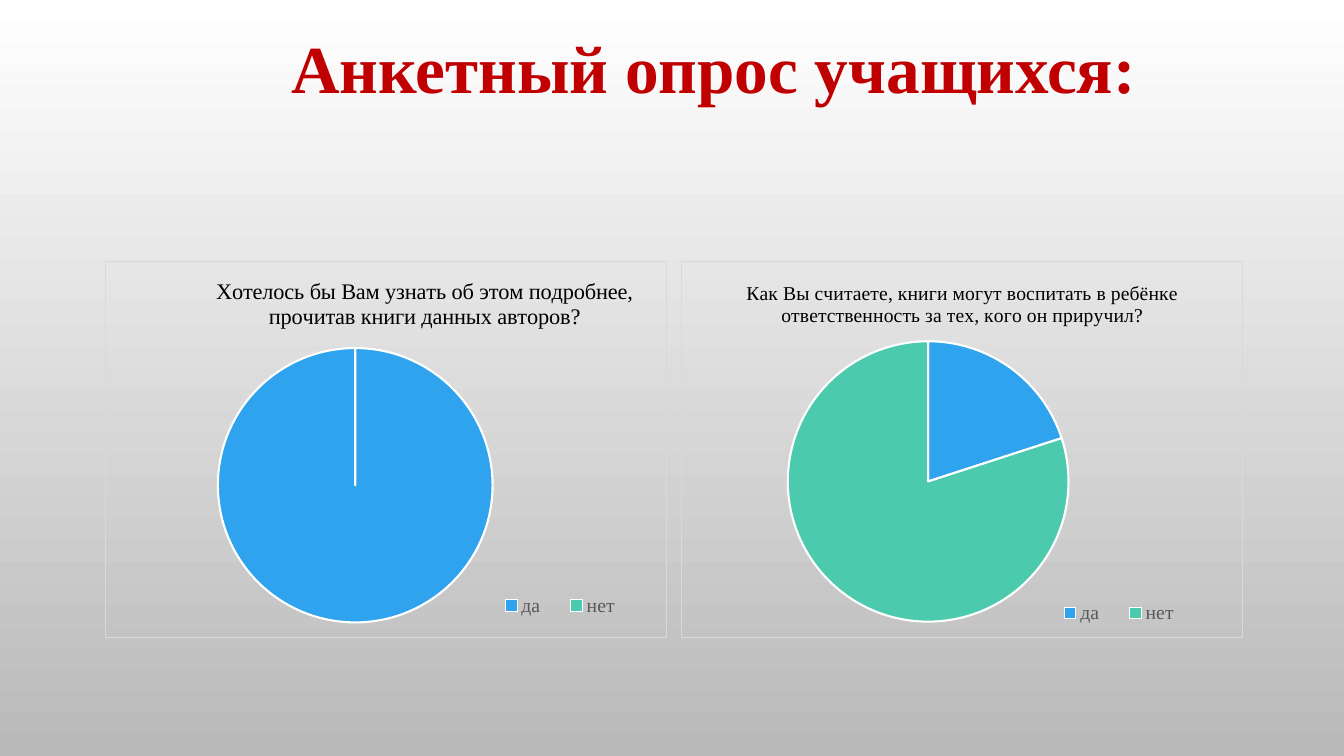
"""Build a survey slide with two pie charts of pupils' answers."""
from lxml import etree
from pptx import Presentation
from pptx.chart.data import CategoryChartData
from pptx.dml.color import RGBColor
from pptx.enum.chart import XL_CHART_TYPE, XL_LEGEND_POSITION
from pptx.enum.text import MSO_ANCHOR, PP_ALIGN
from pptx.oxml import parse_xml
from pptx.oxml.ns import nsdecls, qn
from pptx.util import Inches, Pt

PIE = XL_CHART_TYPE.PIE
LEGEND_RIGHT = XL_LEGEND_POSITION.RIGHT
LEFT = PP_ALIGN.LEFT
TOP = MSO_ANCHOR.TOP

RED = RGBColor(0xC0, 0x00, 0x00)
BLACK = RGBColor(0x00, 0x00, 0x00)
WHITE = RGBColor(0xFF, 0xFF, 0xFF)
GRAY = RGBColor(0xB9, 0xB9, 0xB9)
LEGEND_GRAY = RGBColor(0x59, 0x59, 0x59)
BLUE = RGBColor(0x2F, 0xA3, 0xEE)
GREEN = RGBColor(0x4B, 0xCA, 0xAD)
SERIF = "Times New Roman"

HEADING = "Анкетный опрос учащихся:"
ANSWERS = ["да", "нет"]
SURVEYS = [
    {
        "question": "Хотелось бы Вам узнать об этом подробнее, прочитав книги данных авторов?",
        "size": 16,
        "values": (100, 0),
        "title_at": (0.19, 0.03),
        "pie_at": (0.2, 0.23, 0.49, 0.73),
        "legend_at": (0.67, 0.87, 0.28, 0.09),
    },
    {
        "question": "Как Вы считаете, книги могут воспитать в ребёнке ответственность за тех, кого он приручил?",
        "size": 14,
        "values": (20, 80),
        "title_at": (0.11, 0.04),
        "pie_at": (0.19, 0.21, 0.5, 0.75),
        "legend_at": (0.64, 0.89, 0.28, 0.09),
    },
]
CHART_LEFT, CHART_TOP = 1.04, 2.59
CHART_WIDTH, CHART_HEIGHT = 5.58, 3.74
CHART_STEP = 5.71


def style_font(font, size, color, name=SERIF, bold=False):
    """Set the look of a font."""
    font.name, font.size, font.bold = name, Pt(size), bold
    font.color.rgb = color


def place_part(part, index, fractions, inner=False):
    """Give a chart part a manual layout in fractions of the chart."""
    for old_layout in part.findall(qn("c:layout")):
        part.remove(old_layout)
    layout = etree.Element(qn("c:layout"))
    manual = etree.SubElement(layout, qn("c:manualLayout"))
    settings = [("layoutTarget", "inner")] if inner else []
    settings += [("xMode", "edge"), ("yMode", "edge")]
    settings += zip("xywh", fractions)
    for tag, value in settings:
        etree.SubElement(manual, qn("c:" + tag)).set("val", str(value))
    part.insert(index, layout)


def add_border(chart_space):
    """Outline the chart area and leave it unfilled."""
    border = parse_xml(
        f'<c:spPr {nsdecls("c", "a")}><a:noFill/><a:ln w="9525"><a:solidFill>'
        '<a:srgbClr val="D9D9D9"/></a:solidFill></a:ln></c:spPr>'
    )
    chart_space.find(qn("c:chart")).addnext(border)


def add_survey(slide, survey, left):
    """Add one pie chart with its question and legend."""
    data = CategoryChartData()
    data.categories = ANSWERS
    data.add_series("Series 1", survey["values"])
    chart = slide.shapes.add_chart(
        PIE, Inches(left), Inches(CHART_TOP), Inches(CHART_WIDTH), Inches(CHART_HEIGHT), data
    ).chart
    style_font(chart.font, 10, BLACK, "Calibri")

    chart.has_title = True
    run = chart.chart_title.text_frame.paragraphs[0].add_run()
    run.text = survey["question"]
    style_font(run.font, survey["size"], BLACK)

    chart.has_legend = True
    chart.legend.position = LEGEND_RIGHT
    chart.legend.include_in_layout = False
    style_font(chart.legend.font, 14, LEGEND_GRAY)

    plot = chart.plots[0]
    plot.vary_by_categories = True
    for index, color in enumerate((BLUE, GREEN)):
        point_format = plot.series[0].points[index].format
        point_format.fill.solid()
        point_format.fill.fore_color.rgb = color
        point_format.line.color.rgb = WHITE
        point_format.line.width = Pt(1.5)

    chart_space = chart.element
    chart_element = chart_space.find(qn("c:chart"))
    place_part(chart_element.find(qn("c:title")), 1, survey["title_at"])
    place_part(chart_element.find(qn("c:plotArea")), 0, survey["pie_at"], inner=True)
    place_part(chart_element.find(qn("c:legend")), 1, survey["legend_at"])
    add_border(chart_space)


def main():
    """Create the presentation and save it."""
    presentation = Presentation()
    presentation.slide_width = Inches(13.33)
    presentation.slide_height = Inches(7.5)
    slide = presentation.slides.add_slide(presentation.slide_layouts[5])

    background = slide.background.fill
    background.gradient()
    background.gradient_angle = 270
    for stop, color, position in zip(background.gradient_stops, (WHITE, GRAY), (0, 1)):
        stop.color.rgb = color
        stop.position = position

    title = slide.shapes.title
    title.left, title.top = Inches(2.79), Inches(0.21)
    title.width, title.height = Inches(8.83), Inches(0.91)
    frame = title.text_frame
    frame.word_wrap = False
    frame.vertical_anchor = TOP
    paragraph = frame.paragraphs[0]
    paragraph.alignment = LEFT
    run = paragraph.add_run()
    run.text = HEADING
    style_font(run.font, 48, RED, bold=True)

    for index, survey in enumerate(SURVEYS):
        add_survey(slide, survey, CHART_LEFT + index * CHART_STEP)
    presentation.save("out.pptx")


if __name__ == "__main__":
    main()
